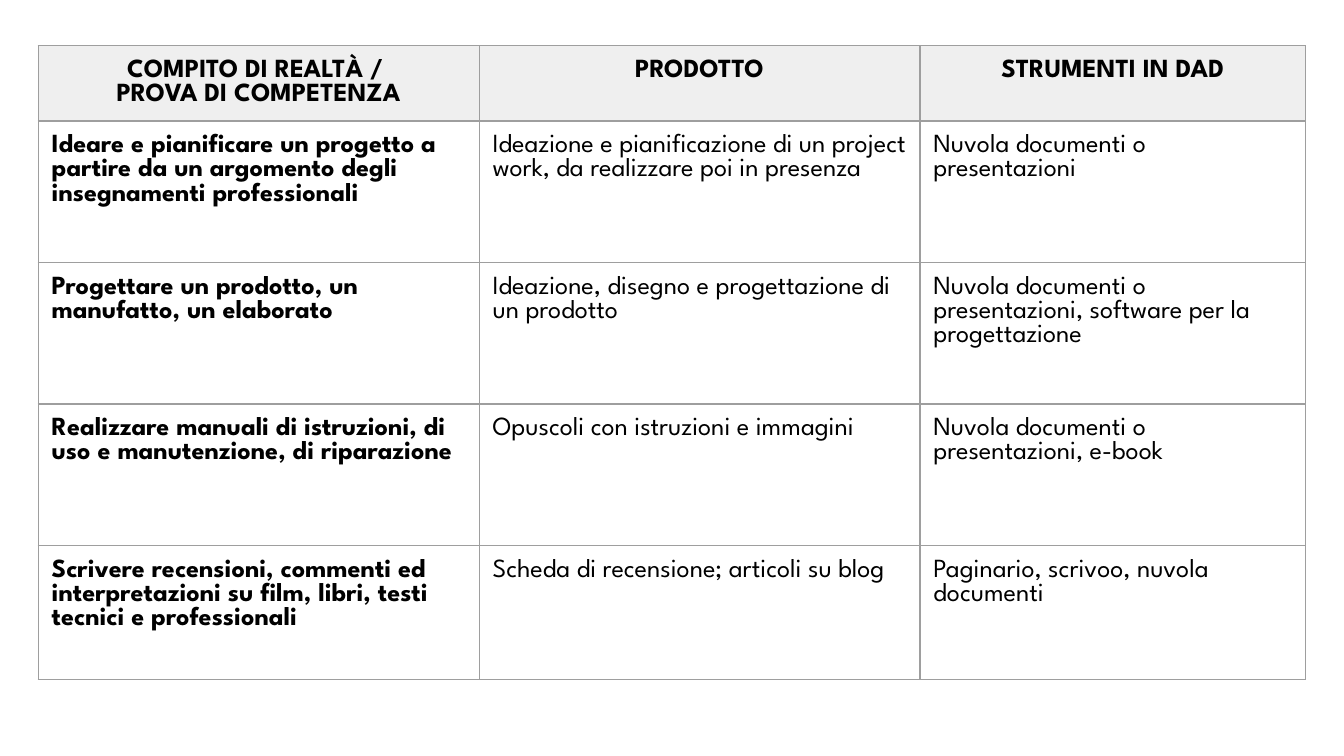
from dataclasses import dataclass

from lxml.etree import SubElement
from pptx import Presentation
from pptx.dml.color import RGBColor
from pptx.enum.text import PP_ALIGN
from pptx.oxml.ns import qn
from pptx.util import Inches, Pt


@dataclass(frozen=True)
class Theme:
    font: str = "League Spartan"
    size: float = 14
    ink: str = "000000"
    header: str = "EFEFEF"
    border: str = "9E9E9E"
    border_width: float = 0.75


WIDTH = 10
HEIGHT = WIDTH * 9 / 16
UNIT = 0.1  # inches per grid column and row
TABLE_LEFT, TABLE_TOP = 2.85, 3.4
COLUMNS = [32.8, 32.8, 28.7]
ROWS = [4.2, 10.53, 10.53, 10.53, 10]

HEADER = ["COMPITO DI REALTÀ / \nPROVA DI COMPETENZA", "PRODOTTO", "STRUMENTI IN DAD"]
TASKS = [
    ["Ideare e pianificare un progetto a partire da un argomento degli insegnamenti professionali",
     "Ideazione e pianificazione di un project work, da realizzare poi in presenza",
     "Nuvola documenti o presentazioni"],
    ["Progettare un prodotto, un manufatto, un elaborato",
     "Ideazione, disegno e progettazione di un prodotto",
     "Nuvola documenti o presentazioni, software per la progettazione"],
    ["Realizzare manuali di istruzioni, di uso e manutenzione, di riparazione",
     "Opuscoli con istruzioni e immagini",
     "Nuvola documenti o presentazioni, e-book"],
    ["Scrivere recensioni, commenti ed interpretazioni su film, libri, testi tecnici e professionali",
     "Scheda di recensione; articoli su blog",
     "Paginario, scrivoo, nuvola documenti"],
]


def grid(count):
    return Inches(count * UNIT)


class SlideBuilder:
    def __init__(self, slide, theme):
        self.slide, self.theme = slide, theme

    def table(self, left, top, columns, rows, content):
        frame = self.slide.shapes.add_table(
            len(rows), len(columns), grid(left), grid(top),
            grid(sum(columns)), grid(sum(rows)))
        table = frame.table
        table.horz_banding = table.first_row = False
        for column, width in zip(table.columns, columns):
            column.width = grid(width)
        for row, height in zip(table.rows, rows):
            row.height = grid(height)
        for i, texts in enumerate(content):
            for j, text in enumerate(texts):
                self.cell(table.cell(i, j), text, header=i == 0, bold=i == 0 or j == 0)

    def cell(self, cell, text, header, bold):
        margins = ("margin_left", "margin_right", "margin_top", "margin_bottom")
        for name in margins:
            setattr(cell, name, grid(1))
        self.borders(cell)
        if header:
            cell.fill.solid()
            cell.fill.fore_color.rgb = RGBColor.from_string(self.theme.header)
        else:
            cell.fill.background()
        font = {"name": self.theme.font, "size": Pt(self.theme.size), "bold": bold}
        tf = cell.text_frame
        tf.text = text
        for p in tf.paragraphs:
            p.alignment = PP_ALIGN.CENTER if header else PP_ALIGN.LEFT
            for r in p.runs:
                for name, value in font.items():
                    setattr(r.font, name, value)
                r.font.color.rgb = RGBColor.from_string(self.theme.ink)

    def borders(self, cell):
        """Draw all four sides; must run before the cell is filled."""
        properties = cell._tc.get_or_add_tcPr()
        for side in ("a:lnL", "a:lnR", "a:lnT", "a:lnB"):
            line = SubElement(properties, qn(side), w=str(Pt(self.theme.border_width)))
            fill = SubElement(line, qn("a:solidFill"))
            SubElement(fill, qn("a:srgbClr"), val=self.theme.border)


def main():
    prs = Presentation()
    prs.slide_width, prs.slide_height = Inches(WIDTH), Inches(HEIGHT)
    s = SlideBuilder(prs.slides.add_slide(prs.slide_layouts[6]), Theme())
    s.table(TABLE_LEFT, TABLE_TOP, COLUMNS, ROWS, [HEADER, *TASKS])
    prs.save("out.pptx")


if __name__ == "__main__":
    main()
